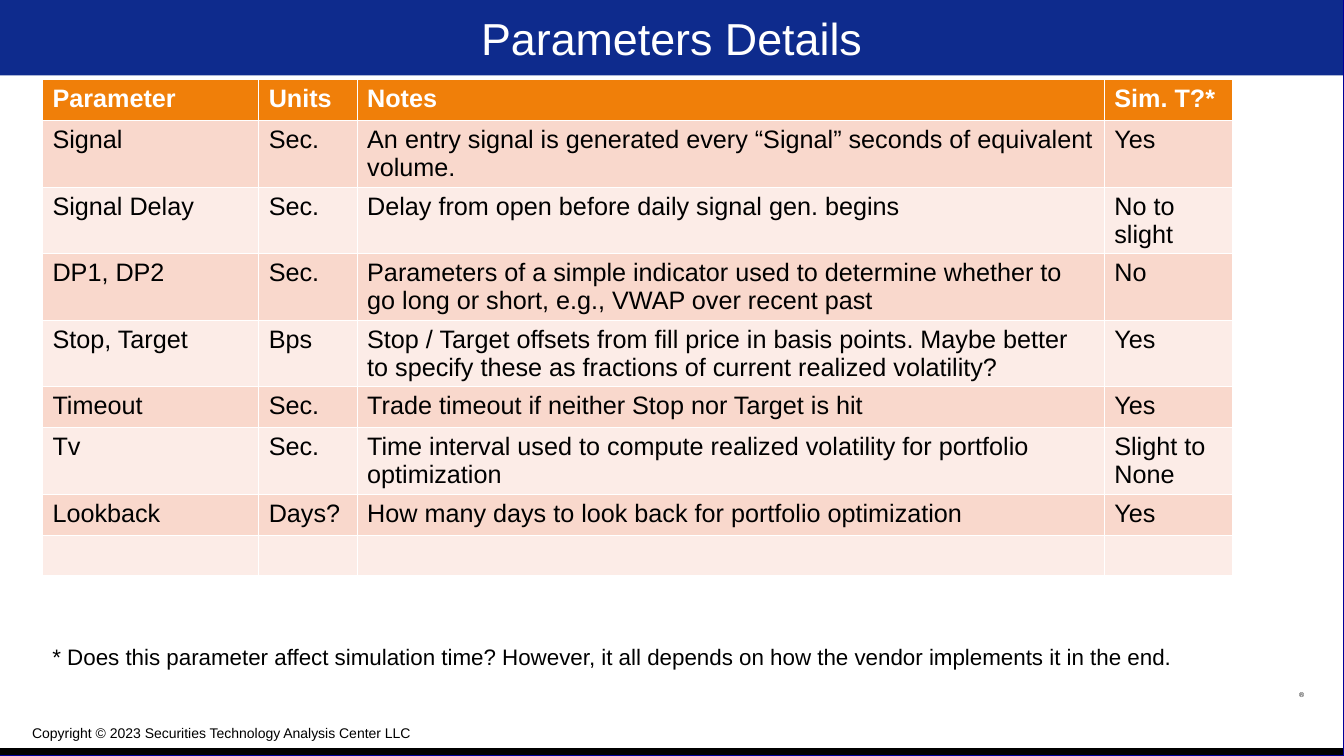
from pptx import Presentation
from pptx import util as u
from pptx.dml.color import RGBColor
from pptx.enum import shapes, text

COLORS = {
    "banner": "0E2B8D",
    "frame": "000099",
    "header": "F07F09",
    "odd_row": "F9D8CC",
    "even_row": "FCECE7",
    "black": "000000",
    "white": "FFFFFF",
}
FONT = "Arial"
WIDTH, HEIGHT = 33.87, 19.05
BANNER_HEIGHT = 1.9
FOOTER_HEIGHT = 0.2

COLUMN_WIDTHS = [5.45, 2.48, 18.83, 3.24]
ROW_HEIGHT = 1.03
PARAMETERS = [
    ("Parameter", "Units", "Notes", "Sim. T?*"),
    ("Signal", "Sec.",
     "An entry signal is generated every “Signal” seconds of equivalent volume.", "Yes"),
    ("Signal Delay", "Sec.", "Delay from open before daily signal gen. begins", "No to slight"),
    ("DP1, DP2", "Sec.",
     "Parameters of a simple indicator used to determine whether to go long or short, "
     "e.g., VWAP over recent past", "No"),
    ("Stop, Target", "Bps",
     "Stop / Target offsets from fill price in basis points. Maybe better to specify these "
     "as fractions of current realized volatility?", "Yes"),
    ("Timeout", "Sec.", "Trade timeout if neither Stop nor Target is hit", "Yes"),
    ("Tv", "Sec.",
     "Time interval used to compute realized volatility for portfolio optimization",
     "Slight to None"),
    ("Lookback", "Days?", "How many days to look back for portfolio optimization", "Yes"),
    ("", "", "", ""),
]


class SlideBuilder:
    def __init__(self, slide):
        self.slide = slide

    def color(self, name):
        return RGBColor.from_string(COLORS[name])

    def box(self, *lengths):
        return [u.Cm(length) for length in lengths]

    def style(self, paragraph, size, color="black", bold=False):
        font = paragraph.font
        font.name, font.size, font.bold = FONT, u.Pt(size), bold
        font.color.rgb = self.color(color)

    def rectangle(self, left, top, width, height, fill=None, line=None):
        shape = self.slide.shapes.add_shape(
            shapes.MSO_SHAPE.RECTANGLE, *self.box(left, top, width, height))
        shape.shadow.inherit = False
        if fill:
            shape.fill.solid()
            shape.fill.fore_color.rgb = self.color(fill)
        else:
            shape.fill.background()
        if line:
            shape.line.color.rgb = self.color(line)
            shape.line.width = u.Pt(0.75)
        else:
            shape.line.fill.background()

    def label(self, wording, left, top, width, height, size):
        frame = self.slide.shapes.add_textbox(*self.box(left, top, width, height)).text_frame
        frame.word_wrap = False
        frame.auto_size = text.MSO_AUTO_SIZE.SHAPE_TO_FIT_TEXT
        frame.text = wording
        self.style(frame.paragraphs[0], size)

    def title(self, wording, left, top, width, height):
        """Fill the title placeholder and bring it in front of the banner."""
        title = self.slide.shapes.title
        title.left, title.top, title.width, title.height = self.box(left, top, width, height)
        frame = title.text_frame
        frame.text = wording
        frame.vertical_anchor = text.MSO_ANCHOR.MIDDLE
        paragraph = frame.paragraphs[0]
        paragraph.alignment = text.PP_ALIGN.CENTER
        self.style(paragraph, 32, "white")
        title.element.getparent().append(title.element)

    def table(self, rows, left, top, column_widths, row_height):
        table = self.slide.shapes.add_table(
            len(rows), len(column_widths),
            *self.box(left, top, sum(column_widths), row_height * len(rows))).table
        for column, width in zip(table.columns, column_widths):
            column.width = u.Cm(width)
        for row_index, row in enumerate(rows):
            table.rows[row_index].height = u.Cm(row_height)
            is_header = row_index == 0
            fill = "header" if is_header else "odd_row" if row_index % 2 else "even_row"
            for column_index, wording in enumerate(row):
                cell = table.cell(row_index, column_index)
                cell.fill.solid()
                cell.fill.fore_color.rgb = self.color(fill)
                cell.text = wording
                self.style(cell.text_frame.paragraphs[0], 18,
                           "white" if is_header else "black", is_header)


def main():
    presentation = Presentation()
    presentation.slide_width, presentation.slide_height = u.Cm(WIDTH), u.Cm(HEIGHT)
    builder = SlideBuilder(presentation.slides.add_slide(presentation.slide_layouts[5]))

    builder.rectangle(0, 0, WIDTH, BANNER_HEIGHT, fill="banner")
    builder.rectangle(0, HEIGHT - FOOTER_HEIGHT, WIDTH, FOOTER_HEIGHT, fill="black")
    builder.label("Copyright © 2023 Securities Technology Analysis Center LLC",
                  0.56, 18.14, 10.19, 0.68, 10)
    builder.rectangle(0, 0, WIDTH, HEIGHT, line="frame")
    builder.label("®", 32.49, 17.27, 0.64, 0.48, 5)
    builder.title("Parameters Details", 0.28, 0, 33.3, BANNER_HEIGHT)
    builder.table(PARAMETERS, 1.07, 2.01, COLUMN_WIDTHS, ROW_HEIGHT)
    builder.label("* Does this parameter affect simulation time? However, it all depends on "
                  "how the vendor implements it in the end.", 1.07, 16.08, 29.08, 0.94, 16)
    presentation.save("out.pptx")


if __name__ == "__main__":
    main()
